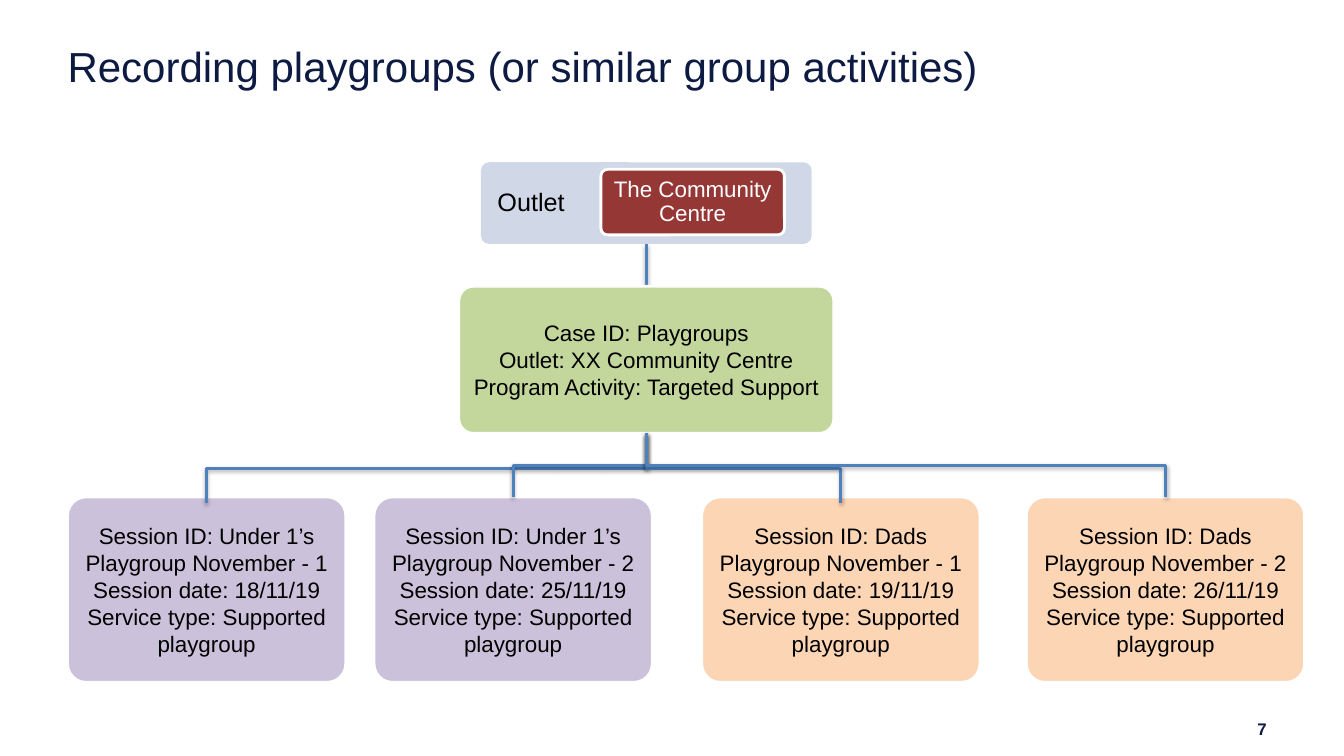
from dataclasses import dataclass

import lxml.etree
import pptx
import pptx.dml.color
import pptx.enum.shapes
import pptx.enum.text
import pptx.oxml
import pptx.oxml.ns
import pptx.util

Inches = pptx.util.Inches
Align = pptx.enum.text.PP_ALIGN
Anchor = pptx.enum.text.MSO_ANCHOR

COLOURS = {
    "navy": "0D1B43",
    "black": "000000",
    "white": "FFFFFF",
    "connector": "4F81BD",
    "outlet": "D0D8E8",
    "centre": "953735",
    "case": "C3D69B",
    "under_ones": "CCC1DA",
    "dads": "FCD5B5",
}
SHADOW = (
    f'<a:effectLst {pptx.oxml.ns.nsdecls("a")}>'
    '<a:outerShdw blurRad="39370" dist="20320" dir="5400000" rotWithShape="0">'
    '<a:srgbClr val="000000"><a:alpha val="38000"/></a:srgbClr>'
    '</a:outerShdw></a:effectLst>'
)
TRUNK_X = 6.41
SESSION_TOP, SESSION_WIDTH, SESSION_HEIGHT = 4.93, 2.76, 1.84


@dataclass
class Box:
    left: float
    top: float
    width: float
    height: float
    lines: list[str]
    fill: str | None = None
    outlined: bool = True
    size: float = 16
    colour: str = "black"
    bold: bool = False
    align: Align = Align.CENTER
    anchor: Anchor = Anchor.MIDDLE
    inset: float = 0.07
    spacing: float = 1.0


@dataclass
class Session:
    left: float
    group: str
    number: int
    date: str
    fill: str
    line_end: float

    def box(self) -> Box:
        lines = [
            f"Session ID: {self.group} Playgroup November - {self.number}",
            f"Session date: {self.date}",
            "Service type: Supported playgroup",
        ]
        return Box(self.left, SESSION_TOP, SESSION_WIDTH, SESSION_HEIGHT, lines, self.fill)


BOXES = [
    Box(0.67, 0.4, 12, 0.66, ["Recording playgroups (or similar group activities)"],
        size=30, colour="navy", align=Align.LEFT, anchor=Anchor.TOP, inset=0),
    Box(11.57, 7.12, 1.09, 0.23, ["7"], size=12, colour="navy", bold=True,
        align=Align.RIGHT, inset=0.1),
    Box(4.77, 1.61, 3.28, 0.81, ["Outlet"], "outlet", outlined=False, size=18,
        align=Align.LEFT, inset=0.14, spacing=0.9),
    Box(5.96, 1.68, 1.82, 0.65, ["The Community Centre"], "centre", colour="white",
        spacing=0.9),
    Box(4.55, 2.84, 3.72, 1.46,
        ["Case ID: Playgroups", "Outlet: XX Community Centre",
         "Program Activity: Targeted Support"], "case"),
]
SESSIONS = [
    Session(0.67, "Under 1’s", 1, "18/11/19", "under_ones", 4.99),
    Session(3.71, "Under 1’s", 2, "25/11/19", "under_ones", 4.93),
    Session(6.96, "Dads", 1, "19/11/19", "dads", 4.99),
    Session(10.18, "Dads", 2, "26/11/19", "dads", 4.93),
]


def rgb(name: str) -> pptx.dml.color.RGBColor:
    return pptx.dml.color.RGBColor.from_string(COLOURS[name])


def set_all(target, values: dict) -> None:
    for name, value in values.items():
        setattr(target, name, value)


def draw_box(page, box: Box) -> None:
    place = [Inches(value) for value in (box.left, box.top, box.width, box.height)]
    if box.fill:
        shape = page.shapes.add_shape(
            pptx.enum.shapes.MSO_SHAPE.ROUNDED_RECTANGLE, *place)
        shape.adjustments[0] = 0.1
        shape.shadow.inherit = False
        shape.fill.solid()
        shape.fill.fore_color.rgb = rgb(box.fill)
        if box.outlined:
            shape.line.color.rgb = rgb("white")
            shape.line.width = pptx.util.Pt(2)
        else:
            shape.line.fill.background()
    else:
        shape = page.shapes.add_textbox(*place)
    frame = shape.text_frame
    side = Inches(box.inset)
    set_all(frame, {
        "word_wrap": True, "vertical_anchor": box.anchor,
        "margin_left": side, "margin_right": side,
        "margin_top": min(side, Inches(0.07)), "margin_bottom": min(side, Inches(0.07)),
    })
    for index, line in enumerate(box.lines):
        para = frame.add_paragraph() if index else frame.paragraphs[0]
        set_all(para, {"alignment": box.align, "line_spacing": box.spacing})
        span = para.add_run()
        span.text = line
        set_all(span.font, {
            "name": "Arial", "size": pptx.util.Pt(box.size), "bold": box.bold})
        span.font.color.rgb = rgb(box.colour)


def draw_connector(page, kind, start: tuple[float, float], end: tuple[float, float]):
    connector = page.shapes.add_connector(
        kind, *(Inches(value) for value in (*start, *end)))
    connector.line.color.rgb = rgb("connector")
    connector.line.width = pptx.util.Pt(2)
    properties = connector._element.spPr
    properties.append(pptx.oxml.parse_xml(SHADOW))
    return connector


def draw_branch(page, start: tuple[float, float], end: tuple[float, float]) -> None:
    connector = draw_connector(page, pptx.enum.shapes.MSO_CONNECTOR.ELBOW, start, end)
    across, down = abs(end[0] - start[0]), end[1] - start[1]
    set_all(connector, {
        "left": Inches((start[0] + end[0] - down) / 2),
        "top": Inches((start[1] + end[1] - across) / 2),
        "width": Inches(down),
        "height": Inches(across),
    })
    frame = connector._element.spPr.find(pptx.oxml.ns.qn("a:xfrm"))
    frame.attrib.pop("flipH", None)
    if end[0] > start[0]:
        frame.set("rot", "16200000")
        frame.set("flipH", "1")
    else:
        frame.set("rot", "5400000")


def main() -> None:
    deck = pptx.Presentation()
    set_all(deck, {"slide_width": Inches(13.33), "slide_height": Inches(7.5)})
    page = deck.slides.add_slide(deck.slide_layouts[6])
    draw_connector(page, pptx.enum.shapes.MSO_CONNECTOR.STRAIGHT,
                   (TRUNK_X, 2.42), (TRUNK_X, 2.89))
    for box in BOXES + [session.box() for session in SESSIONS]:
        draw_box(page, box)
    for session in SESSIONS:
        middle = session.left + SESSION_WIDTH / 2
        draw_branch(page, (TRUNK_X, 4.3), (middle, session.line_end))
    deck.save("out.pptx")


if __name__ == "__main__":
    main()
